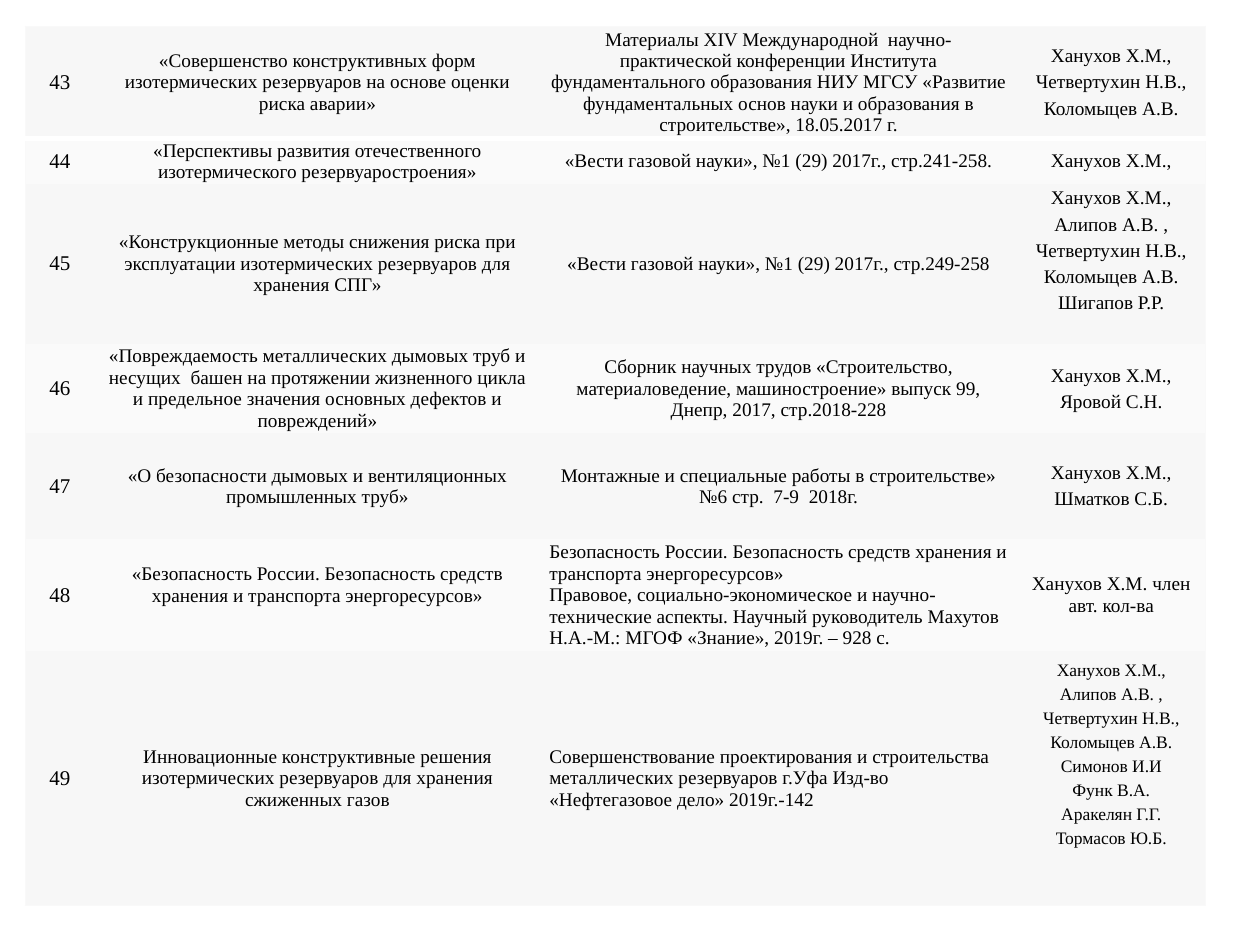
from lxml import etree
from pptx import Presentation
from pptx import util as u
from pptx.dml.color import RGBColor
from pptx.enum import text
from pptx.oxml import ns

COLS = [0.55, 3.54, 3.78, 1.5]
ROWS = [0.89, 0.36, 1.27, 0.71, 0.84, 0.89, 2.02]
BANDS = ["F7F7F7", "FAFAFA"]
EDGE = ("F9F9F9", 0.75)
DIVIDER = ("FFFFFF", 3)
FIRST_NUMBER = 43
NO_STYLE = "{2D5ABB26-0587-4C30-8999-92F81FD0307C}"
LEFT = {"align": text.PP_ALIGN.LEFT, "before": 0}

PUBLICATIONS = [
    ("«Совершенство конструктивных форм изотермических резервуаров на основе оценки риска аварии»",
     "Материалы ХIV Международной  научно-практической конференции Института фундаментального "
     "образования НИУ МГСУ «Развитие фундаментальных основ науки и образования в строительстве», "
     "18.05.2017 г.",
     "Ханухов Х.М.,\nЧетвертухин Н.В.,\nКоломыцев А.В."),
    ("«Перспективы развития отечественного изотермического резервуаростроения»",
     "«Вести газовой науки», №1 (29) 2017г., стр.241-258.",
     "Ханухов Х.М.,"),
    ("«Конструкционные методы снижения риска при эксплуатации изотермических резервуаров для "
     "хранения СПГ»",
     "«Вести газовой науки», №1 (29) 2017г., стр.249-258",
     "Ханухов Х.М.,\nАлипов А.В. ,\nЧетвертухин Н.В.,\nКоломыцев А.В.\nШигапов Р.Р."),
    ("«Повреждаемость металлических дымовых труб и несущих  башен на протяжении жизненного цикла "
     "и предельное значения основных дефектов и повреждений»",
     "Сборник научных трудов «Строительство, материаловедение, машиностроение» выпуск 99, "
     "Днепр, 2017, стр.2018-228",
     "Ханухов Х.М.,\nЯровой С.Н."),
    ("«О безопасности дымовых и вентиляционных промышленных труб»",
     "Монтажные и специальные работы в строительстве» №6 стр.  7-9  2018г.",
     "Ханухов Х.М.,\nШматков С.Б."),
    ("«Безопасность России. Безопасность средств хранения и транспорта энергоресурсов»",
     "Безопасность России. Безопасность средств хранения и транспорта энергоресурсов»\n"
     "Правовое, социально-экономическое и научно-технические аспекты. Научный руководитель "
     "Махутов Н.А.-М.: МГОФ «Знание», 2019г. – 928 с.",
     "Ханухов Х.М. член авт. кол-ва"),
    ("Инновационные конструктивные решения изотермических резервуаров для хранения сжиженных газов",
     "Совершенствование проектирования и строительства металлических резервуаров г.Уфа Изд-во "
     "«Нефтегазовое дело» 2019г.-142",
     "Ханухов Х.М.,\nАлипов А.В. ,\nЧетвертухин Н.В.,\nКоломыцев А.В.\nСимонов И.И\nФунк В.А.\n"
     "Аракелян Г.Г.\nТормасов Ю.Б."),
]

FORMATS = {
    (2, 3): {"bottom": 0.21},
    (5, 1): {"bottom": 0.16},
    (5, 2): LEFT,
    (6, 2): LEFT,
    (6, 3): {"size": 10, "bottom": 0.38},
}


def rgb(value):
    """Return the colour for a hex string."""
    return RGBColor.from_string(value)


def write(cell, content, size=11, align=text.PP_ALIGN.CENTER, before=2.7, bottom=0):
    """Write one paragraph per line of content into a cell."""
    cell.vertical_anchor = text.MSO_ANCHOR.MIDDLE
    cell.margin_left = cell.margin_right = u.Inches(0.07)
    cell.margin_top, cell.margin_bottom = 0, u.Inches(bottom)
    tf = cell.text_frame
    for i, line in enumerate(content.split("\n")):
        p = tf.add_paragraph() if i else tf.paragraphs[0]
        p.alignment = align
        p.space_before = u.Pt(before if i else 0)
        r = p.add_run()
        r.text = line
        r.font.name, r.font.size = "Times New Roman", u.Pt(size)
        r.font.color.rgb = rgb("000000")


def add_border(cell, side, color, width):
    """Draw a solid border on one side of a cell."""
    ln = etree.SubElement(cell._tc.get_or_add_tcPr(), ns.qn(f"a:ln{side}"), w=str(u.Pt(width)))
    fill = etree.SubElement(ln, ns.qn("a:solidFill"))
    etree.SubElement(fill, ns.qn("a:srgbClr"), val=color)


def style_cell(cell, row, col):
    """Give a cell its borders and the band colour of its row."""
    last_row, last_col = len(ROWS) - 1, len(COLS) - 1
    borders = {
        "L": EDGE if col == 0 else None,
        "R": EDGE if col == last_col else None,
        "T": EDGE if row == 0 else None,
        "B": {0: DIVIDER, last_row: EDGE}.get(row),
    }
    for side, border in borders.items():
        if border:
            add_border(cell, side, *border)
    cell.fill.solid()
    cell.fill.fore_color.rgb = rgb(BANDS[row % 2])


def add_publications(s):
    """Add the numbered table of publications."""
    box = [u.Inches(v) for v in (0.2, 0.21, sum(COLS), sum(ROWS))]
    table = s.shapes.add_table(len(ROWS), len(COLS), *box).table
    table.first_row = table.horz_banding = False
    table._tbl.tblPr.find(ns.qn("a:tableStyleId")).text = NO_STYLE
    for column, width in zip(table.columns, COLS):
        column.width = u.Inches(width)
    for i, (height, publication) in enumerate(zip(ROWS, PUBLICATIONS)):
        table.rows[i].height = u.Inches(height)
        for j, content in enumerate((str(FIRST_NUMBER + i), *publication)):
            cell = table.cell(i, j)
            style_cell(cell, i, j)
            write(cell, content, **FORMATS.get((i, j), {"size": 11 if j else 12}))


def main():
    """Build and save the slide."""
    prs = Presentation()
    prs.slide_width, prs.slide_height = u.Inches(10), u.Inches(7.5)
    add_publications(prs.slides.add_slide(prs.slide_layouts[6]))
    prs.save("out.pptx")


if __name__ == "__main__":
    main()
